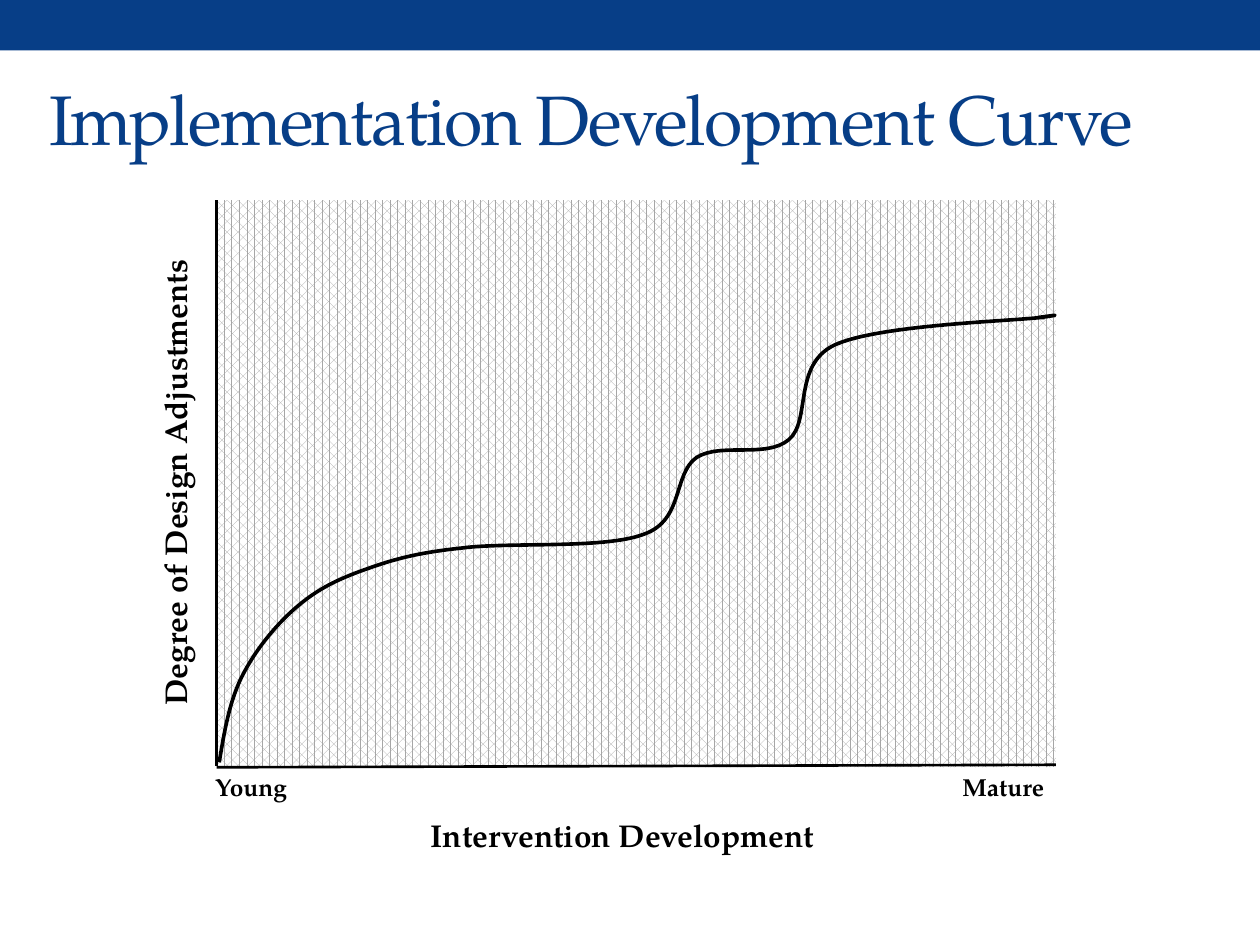
import lxml.etree
import pptx
import pptx.dml.color
import pptx.enum.dml
import pptx.enum.shapes
import pptx.enum.text
import pptx.oxml.ns
import pptx.util

Inches = pptx.util.Inches
ALIGN = pptx.enum.text.PP_ALIGN
FONT = "TeX Gyre Pagella"
BLUE = "073E87"
BLACK = "000000"

CURVE_SIZE = (664, 355)
CURVE_STEPS = [
    ("moveTo", [(0, 355)]),
    ("cubicBezTo", [(4, 331), (8, 307), (18, 287)]),
    ("cubicBezTo", [(28, 267), (44, 247), (60, 233)]),
    ("cubicBezTo", [(76, 219), (91, 211), (113, 203)]),
    ("cubicBezTo", [(135, 195), (154, 189), (192, 185)]),
    ("cubicBezTo", [(229, 180), (306, 186), (337, 174)]),
    ("cubicBezTo", [(369, 163), (360, 126), (379, 113)]),
    ("cubicBezTo", [(398, 101), (434, 114), (452, 99)]),
    ("cubicBezTo", [(470, 84), (455, 40), (488, 24)]),
    ("cubicBezTo", [(522, 8), (625, 5), (652, 2)]),
    ("cubicBezTo", [(679, -2), (650, 2), (650, 2)]),
    ("lnTo", [(650, 2)]),
    ("lnTo", [(655, 2)]),
]


def rgb(value):
    """Return the colour for a hex string."""
    return pptx.dml.color.RGBColor.from_string(value)


def style_font(font, size, color, bold=False):
    """Set the typeface, size, colour and weight of a font."""
    font.name = FONT
    font.size = pptx.util.Pt(size)
    font.color.rgb = rgb(color)
    font.bold = bold


def add_label(shapes, text, left, top, width, height, size, align, rotation=0):
    """Add a bold label of the diagram."""
    label = shapes.add_textbox(Inches(left), Inches(top), Inches(width), Inches(height))
    label.rotation = rotation
    label.text_frame.word_wrap = True
    label.text_frame.auto_size = pptx.enum.text.MSO_AUTO_SIZE.SHAPE_TO_FIT_TEXT
    paragraph = label.text_frame.paragraphs[0]
    paragraph.text = text
    paragraph.alignment = align
    style_font(paragraph.font, size, BLACK, bold=True)


def add_axis(shapes, x1, y1, x2, y2):
    """Add one black axis line without a shadow."""
    axis = shapes.add_connector(
        pptx.enum.shapes.MSO_CONNECTOR.STRAIGHT,
        Inches(x1), Inches(y1), Inches(x2), Inches(y2))
    axis.line.color.rgb = rgb(BLACK)
    axis.line.width = pptx.util.Pt(1.5)
    lxml.etree.SubElement(axis._element.spPr, pptx.oxml.ns.qn("a:effectLst"))


def add_curve(shapes, left, top):
    """Draw the development curve in hundredths of an inch from its top left corner."""
    qn = pptx.oxml.ns.qn
    builder = shapes.build_freeform(0, 0, scale=Inches(0.01))
    builder.add_line_segments([CURVE_SIZE], close=False)
    curve = builder.convert_to_shape(Inches(left), Inches(top))
    outline = curve._element.spPr.find(".//" + qn("a:path"))
    for step in list(outline):
        outline.remove(step)
    for command, points in CURVE_STEPS:
        step = lxml.etree.SubElement(outline, qn("a:" + command))
        for x, y in points:
            lxml.etree.SubElement(step, qn("a:pt"), x=str(x), y=str(y))
    curve.shadow.inherit = False
    curve.fill.background()
    curve.line.color.rgb = rgb(BLACK)
    curve.line.width = pptx.util.Pt(2.08)


def add_header(slide, width):
    """Add the blue band and the slide title."""
    band = slide.shapes.add_shape(
        pptx.enum.shapes.MSO_SHAPE.RECTANGLE, 0, 0, Inches(width), Inches(0.4))
    band.shadow.inherit = False
    band.fill.solid()
    band.fill.fore_color.rgb = rgb(BLUE)
    band.line.fill.background()

    title = slide.shapes.title
    title.left, title.top = Inches(0.29), Inches(0.39)
    title.width, title.height = Inches(width - 1), Inches(1.08)
    title.text_frame.vertical_anchor = pptx.enum.text.MSO_ANCHOR.MIDDLE
    paragraph = title.text_frame.paragraphs[0]
    paragraph.text = "Implementation Development Curve"
    paragraph.alignment = ALIGN.LEFT
    style_font(paragraph.font, 40, BLUE)
    paragraph.runs[0].font._element.set("spc", "-100")


def add_diagram(slide, left, top, width, height):
    """Add the plot area, axes, labels and curve in the given box."""
    shapes = slide.shapes.add_group_shape().shapes
    right, bottom = left + width, top + height

    plot = shapes.add_shape(
        pptx.enum.shapes.MSO_SHAPE.RECTANGLE,
        Inches(left), Inches(top), Inches(width), Inches(height))
    plot.shadow.inherit = False
    plot.fill.patterned()
    plot.fill.pattern = pptx.enum.dml.MSO_PATTERN.PERCENT_60
    plot.fill.fore_color.rgb = rgb("A6A6A6")
    plot.fill.back_color.rgb = rgb("FFFFFF")
    plot.line.fill.background()

    add_axis(shapes, left, top, left, bottom - 0.01)
    add_axis(shapes, right, bottom - 0.02, left, bottom)
    add_label(shapes, "Degree of Design Adjustments",
              left - 2.57, top + 2.04, 4.48, 0.4, 18, ALIGN.CENTER, 270)
    add_label(shapes, "Intervention Development",
              left - 0.11, bottom + 0.34, width, 0.41, 18, ALIGN.CENTER)
    for text, label_left, label_width in (
            ("Young", left - 0.11, 1.03), ("Mature", right - 0.84, 0.88)):
        add_label(shapes, text, label_left, bottom - 0.01, label_width, 0.34, 14, ALIGN.LEFT)
    add_curve(shapes, left + 0.02, top + 0.91)


def main():
    """Build and save the slide."""
    presentation = pptx.Presentation()
    presentation.slide_width = Inches(10)
    presentation.slide_height = Inches(7.5)
    slide = presentation.slides.add_slide(presentation.slide_layouts[5])
    add_header(slide, 10)
    add_diagram(slide, 1.72, 1.59, 6.66, 4.5)
    presentation.save("out.pptx")


if __name__ == "__main__":
    main()
